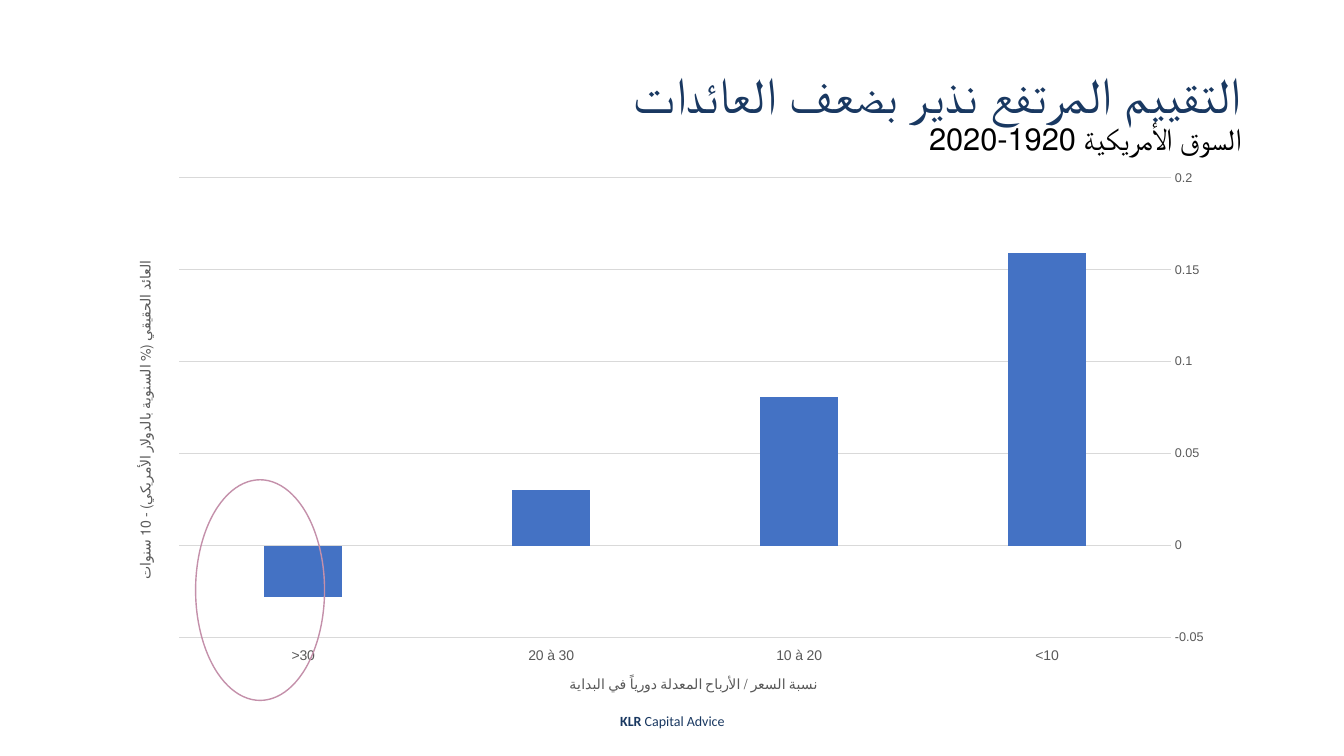
from dataclasses import dataclass

from lxml import etree
from pptx import Presentation
from pptx.chart.data import CategoryChartData
from pptx.dml.color import RGBColor
from pptx.enum import chart as charts, shapes, text
from pptx.oxml import ns
from pptx.util import Cm, Pt

HEADING = "التقييم المرتفع نذير بضعف العائدات"
SUBHEADING = "السوق الأمريكية 1920-2020"
FOOTER = [("KLR ", True), ("Capital Advice", False)]
RETURNS = {"<10": 0.159, "10 à 20": 0.081, "20 à 30": 0.03, ">30": -0.028}
RATIO_TITLE = "نسبة السعر / الأرباح المعدلة دورياً في البداية"
RETURN_TITLE = "العائد الحقيقي (% السنوية بالدولار الأمريكي) - 10 سنوات"

HEADING_AREA = (2.34, 1.02, 29.21, 3.68)
FOOTER_AREA = (11.23, 17.65, 11.43, 1.02)
CHART_AREA = (2.95, 4.01, 27.99, 13.97)
RING_AREA = (4.93, 12.09, 3.25, 5.56)
PLOT_LAYOUT = {"layoutTarget": "inner", "xMode": "edge", "yMode": "edge",
               "x": 0.056, "y": 0.034, "w": 0.893, "h": 0.829}
RATIO_LAYOUT = {"xMode": "edge", "yMode": "edge", "x": 0.405, "y": 0.93}
RETURN_LAYOUT = {"xMode": "edge", "yMode": "edge", "x": 0.017, "y": 0.178}


@dataclass(frozen=True)
class Theme:
    navy: RGBColor = RGBColor.from_string("193861")
    black: RGBColor = RGBColor.from_string("000000")
    grey: RGBColor = RGBColor.from_string("595959")
    rule: RGBColor = RGBColor.from_string("D9D9D9")
    bar: RGBColor = RGBColor.from_string("4472C4")
    ring: RGBColor = RGBColor.from_string("C490AA")
    body: str = "Calibri"
    labels: str = "Arial"
    heading_size: int = 36
    subheading_size: int = 22
    small_size: int = 10
    value_size: int = 9


THEME = Theme()


def area(values):
    return [Cm(value) for value in values]


def style(font, size, color, name, bold=False):
    font.size, font.name, font.bold = Pt(size), name, bold
    font.color.rgb = color


def set_layout(parent, position, values):
    for old in parent.findall(ns.qn("c:layout")):
        parent.remove(old)
    layout = etree.Element(ns.qn("c:layout"))
    manual = etree.SubElement(layout, ns.qn("c:manualLayout"))
    for key, value in values.items():
        etree.SubElement(manual, ns.qn(f"c:{key}")).set("val", str(value))
    parent.insert(position, layout)


def format_axis(axis, title, layout, size):
    axis.major_tick_mark = axis.minor_tick_mark = charts.XL_TICK_MARK.NONE
    style(axis.tick_labels.font, size, THEME.grey, THEME.labels)
    para = axis.axis_title.text_frame.paragraphs[0]
    para.text = title
    style(para.font, THEME.small_size, THEME.grey, THEME.body)
    set_layout(axis.axis_title._element, 1, layout)


def add_heading(page):
    title = page.shapes.title
    title.left, title.top, title.width, title.height = area(HEADING_AREA)
    frame = title.text_frame
    frame.word_wrap = True
    frame.vertical_anchor = text.MSO_ANCHOR.MIDDLE
    para = frame.paragraphs[0]
    para.alignment = text.PP_ALIGN.RIGHT
    para.line_spacing = 0.9
    para._p.get_or_add_pPr().set("rtl", "1")
    para.font.name = THEME.body
    main = para.add_run()
    main.text = HEADING
    style(main.font, THEME.heading_size, THEME.navy, THEME.body)
    para.add_line_break()
    sub = para.add_run()
    sub.text = SUBHEADING
    style(sub.font, THEME.subheading_size, THEME.black, THEME.body)


def add_footer(page):
    frame = page.shapes.add_textbox(*area(FOOTER_AREA)).text_frame
    frame.word_wrap = True
    frame.vertical_anchor = text.MSO_ANCHOR.MIDDLE
    para = frame.paragraphs[0]
    para.alignment = text.PP_ALIGN.CENTER
    for words, bold in FOOTER:
        span = para.add_run()
        span.text = words
        style(span.font, THEME.small_size, THEME.navy, THEME.body, bold)


def add_returns_chart(page):
    data = CategoryChartData()
    data.categories = list(RETURNS)
    data.add_series("Series 1", list(RETURNS.values()))
    chart = page.shapes.add_chart(
        charts.XL_CHART_TYPE.COLUMN_CLUSTERED, *area(CHART_AREA), data).chart
    chart.has_legend = chart.has_title = False
    style(chart.font, THEME.small_size, THEME.black, THEME.labels)
    plot = chart.plots[0]
    plot.gap_width, plot.overlap, plot.vary_by_categories = 219, -27, False
    series = plot.series[0]
    series.invert_if_negative = False
    series.format.fill.solid()
    series.format.fill.fore_color.rgb = THEME.bar

    ratios, values = chart.category_axis, chart.value_axis
    format_axis(ratios, RATIO_TITLE, RATIO_LAYOUT, THEME.small_size)
    format_axis(values, RETURN_TITLE, RETURN_LAYOUT, THEME.value_size)
    ratios.reverse_order = True
    ratios.tick_label_position = charts.XL_TICK_LABEL_POSITION.LOW
    values.minimum_scale, values.maximum_scale, values.major_unit = -0.05, 0.2, 0.05
    values.format.line.fill.background()
    for line in (ratios.format.line, values.major_gridlines.format.line):
        line.color.rgb = THEME.rule
        line.width = Pt(0.75)
    set_layout(chart._chartSpace.find(".//" + ns.qn("c:plotArea")), 0, PLOT_LAYOUT)


def add_ring(page):
    ring = page.shapes.add_shape(shapes.MSO_SHAPE.OVAL, *area(RING_AREA))
    ring.shadow.inherit = False
    ring.fill.background()
    ring.line.color.rgb = THEME.ring
    ring.line.width = Pt(1)


def main():
    deck = Presentation()
    deck.slide_width, deck.slide_height = Cm(33.87), Cm(19.05)
    page = deck.slides.add_slide(deck.slide_layouts.get_by_name("Title Only"))
    add_heading(page)
    add_footer(page)
    add_returns_chart(page)
    add_ring(page)
    deck.save("out.pptx")


if __name__ == "__main__":
    main()
